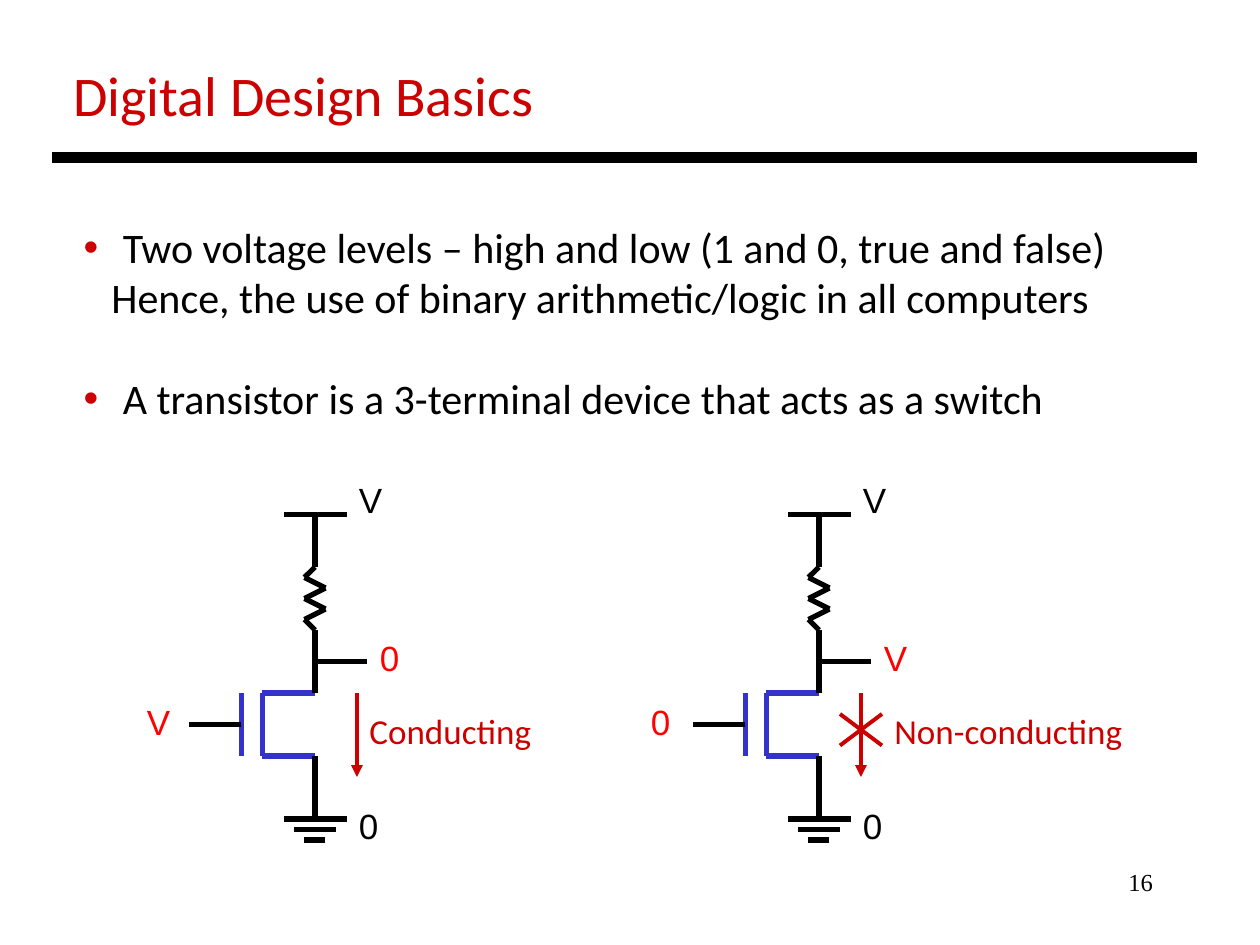
from itertools import pairwise
from typing import NamedTuple

from lxml import etree
from pptx import Presentation
from pptx import util as u
from pptx.dml.color import RGBColor
from pptx.enum import shapes, text
from pptx.oxml.ns import qn

COLS, ROWS = 120, 90  # grid of twelve cells to the inch
INK = {"black": "000000", "red": "CC0000", "bright": "FF0000", "blue": "3333CC"}

deck = Presentation()
deck.slide_width, deck.slide_height = u.Inches(10), u.Inches(7.5)
CELL = deck.slide_width // COLS
slide = deck.slides.add_slide(deck.slide_layouts[6])


class Wire(NamedTuple):
    """A run of straight lines through grid points."""
    points: list[tuple[float, float]]
    ink: str = "black"
    width: float = 3
    arrow: bool = False


class Label(NamedTuple):
    words: str
    col: float
    row: float
    wide: float = 4.7
    ink: str = "black"
    font: str = "Arial"
    size: float = 20


class Stage(NamedTuple):
    """One circuit: its axis column, gate and output levels, and state."""
    axis: int
    gate: str
    out: str
    state: str
    shift: float
    wide: float
    cut: bool


# Points are columns from the circuit's axis, and rows of the slide.
CIRCUIT = [
    Wire([(-5, 66), (-5, 72)], "blue"),
    Wire([(0, 66), (-5, 66)], "blue"),
    Wire([(0, 72), (-5, 72)], "blue"),
    Wire([(-7, 66), (-7, 72)], "blue"),
    Wire([(-7, 69), (-12, 69)]),
    Wire([(0, 60), (0, 66)]),
    Wire([(0, 72), (0, 78)]),
    Wire([(5, 63), (0, 63)]),
    *(Wire([(half, row), (-half, row)])
      for half, row in [(3, 49), (3, 78), (2, 79), (1, 80)]),
    Wire([(0, 49), (0, 54), *((-1 if row % 2 else 1, row) for row in range(55, 60)),
          (0, 60)]),
    Wire([(4, 66), (4, 74)], "red", 2.25, True),
]
CROSS = [Wire([(2, 68), (6, 71)], "red", 2.25),
         Wire([(6, 68), (2, 71)], "red", 2.25)]

STAGES = [Stage(30, "V", "0", "Conducting", 4, 18, False),
          Stage(78, "0", "V", "Non-conducting", 6, 24.4, True)]


def cells(count: float) -> int:
    return round(count * CELL)


def draw_wire(wire: Wire, axis: int = 0) -> None:
    for (x1, y1), (x2, y2) in pairwise(wire.points):
        line = slide.shapes.add_connector(
            shapes.MSO_CONNECTOR.STRAIGHT,
            cells(axis + x1), cells(y1), cells(axis + x2), cells(y2))
        line.line.color.rgb = RGBColor.from_string(INK[wire.ink])
        line.line.width = u.Pt(wire.width)
        if wire.arrow:
            etree.SubElement(line.line._get_or_add_ln(), qn("a:tailEnd"), type="triangle")
        etree.SubElement(line._element.spPr, qn("a:effectLst"))


def style(par, font: str, size: float, ink: str) -> None:
    par.font.name, par.font.size = font, u.Pt(size)
    par.font.color.rgb = RGBColor.from_string(INK[ink])


def add_box(col: float, row: float, wide: float, high: float):
    box = slide.shapes.add_textbox(cells(col), cells(row), cells(wide), cells(high))
    box.text_frame.word_wrap = False
    return box.text_frame


def draw_label(label: Label):
    frame = add_box(label.col, label.row, label.wide, label.size / 4)
    par = frame.paragraphs[0]
    par.text = label.words
    style(par, label.font, label.size, label.ink)
    return par


def indent(par, left: float, bullet: bool) -> None:
    """Set the left margin in inches, with a hanging red bullet if asked."""
    props = par._p.get_or_add_pPr()
    props.set("marL", str(u.Inches(left)))
    if bullet:
        props.set("indent", str(-u.Inches(left)))
        color = etree.SubElement(props, qn("a:buClr"))
        etree.SubElement(color, qn("a:srgbClr"), val=INK["red"])
        etree.SubElement(props, qn("a:buFont"), typeface="Arial")
        etree.SubElement(props, qn("a:buChar"), char="•")


def draw_points() -> None:
    lines = [
        ("Two voltage levels – high and low (1 and 0, true and false)", True, 0),
        ("Hence, the use of binary arithmetic/logic in all computers", False, 0),
        ("A transistor is a 3-terminal device that acts as a switch", True, 29),
    ]
    frame = add_box(6.8, 20.5, 99.8, 20.6)
    for i, (words, bullet, gap) in enumerate(lines):
        par = frame.add_paragraph() if i else frame.paragraphs[0]
        par.text = words
        par.space_before = u.Pt(gap)
        style(par, "Calibri", 24, "black")
        indent(par, 0.31 if bullet else 0.22, bullet)


def draw_stage(stage: Stage) -> None:
    axis = stage.axis
    for wire in CIRCUIT + (CROSS if stage.cut else []):
        draw_wire(wire, axis)
    for label in [
        Label(stage.gate, axis - 17.2, 66.1, ink="bright"),
        Label("V", axis + 3, 45),
        Label("0", axis + 3, 76),
        Label(stage.out, axis + 5, 60, ink="bright"),
        Label(stage.state, axis + stage.shift, 67, stage.wide, "red", "Calibri"),
    ]:
        draw_label(label)


draw_label(Label("Digital Design Basics", 5.8, 5.2, 46.8, "red", "Calibri", 32))
draw_wire(Wire([(5, 15), (114, 15)], width=6))
draw_points()
for stage in STAGES:
    draw_stage(stage)
number = draw_label(Label("16", 86, 82, 25, font="Times New Roman", size=14))
number.alignment = text.PP_ALIGN.RIGHT

deck.save("out.pptx")
